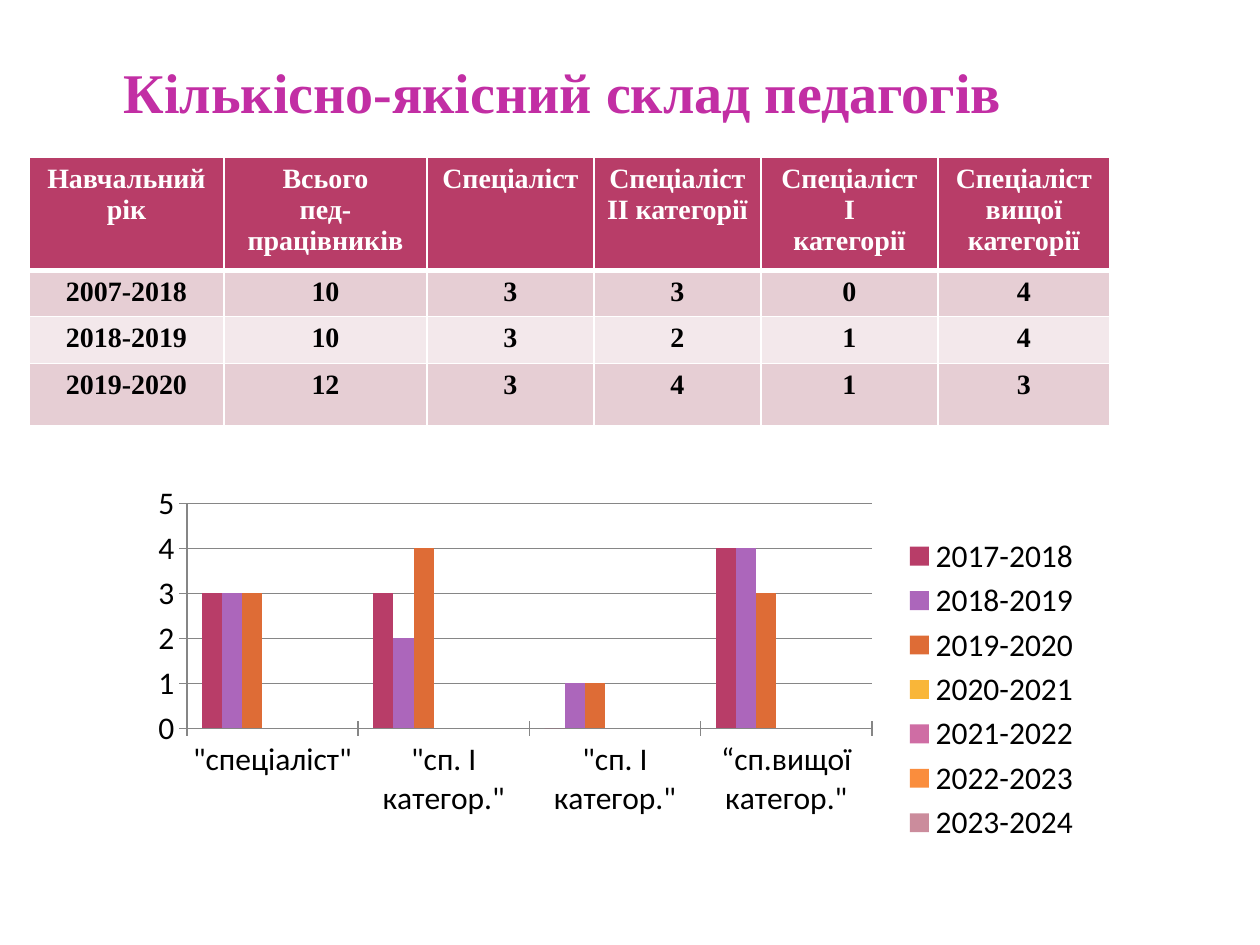
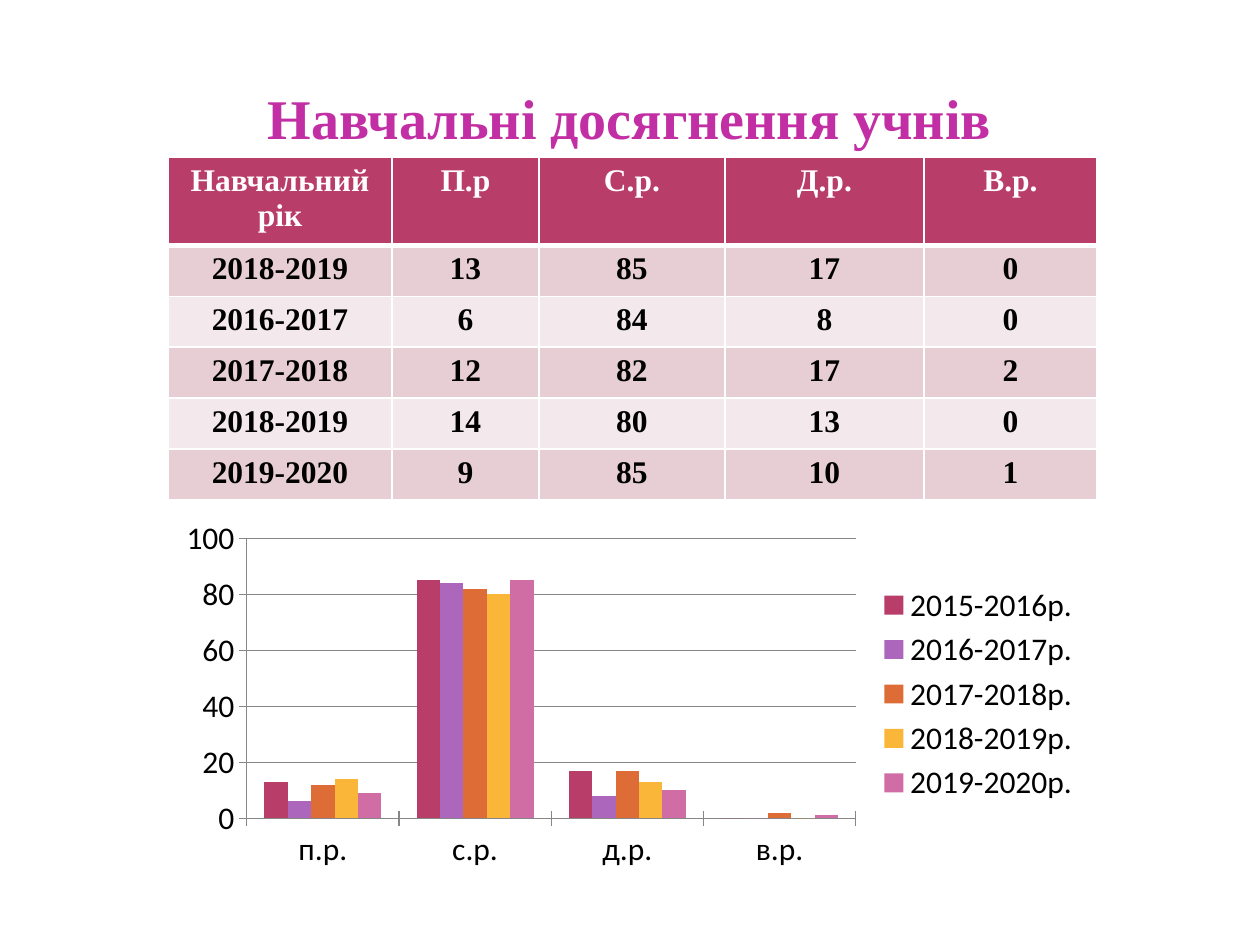
from dataclasses import dataclass
from typing import Optional

import pptx
import pptx.chart.data
import pptx.dml.color
import pptx.enum.chart
import pptx.enum.text
import pptx.oxml
import pptx.oxml.ns
import pptx.util

EMU_PER_PX = 914400 / 126


@dataclass(frozen=True)
class Theme:
    title: str = "C22EA4"
    header_fill: str = "B83D68"
    header_text: str = "FFFFFF"
    body_text: str = "000000"
    bands: tuple[str, ...] = ("E6CED4", "F3E8EB")
    border: str = "FFFFFF"
    chart_line: str = "868686"
    series: tuple[str, ...] = (
        "B83D68", "AC66BB", "DE6C36", "F9B639", "CF6DA4", "FA8D3D", "CB8C9C")
    title_font: str = "Times New Roman"
    chart_font: str = "Calibri"
    title_size: int = 32
    chart_size: int = 18
    border_width: int = 1
    header_rule_width: int = 3


THEME = Theme()


@dataclass(frozen=True)
class Box:
    left: int
    top: int
    width: int
    height: int

    def emu(self) -> tuple[pptx.util.Emu, ...]:
        return tuple(px(n) for n in (self.left, self.top, self.width, self.height))


@dataclass(frozen=True)
class TableSpec:
    left: int
    top: int
    columns: list[int]
    rows: list[int]
    text_size: int
    cells: list[list[str]]


@dataclass(frozen=True)
class ChartSpec:
    box: Box
    categories: list[str]
    series: dict[str, list[Optional[int]]]
    major_unit: int
    maximum: int
    plot: Optional[tuple[float, float, float, float]] = None


@dataclass(frozen=True)
class ReportSlide:
    title: str
    title_box: Box
    table: TableSpec
    chart: ChartSpec


NO_VALUES = [None] * 4

REPORTS = [
    ReportSlide(
        "Кількісно-якісний склад педагогів",
        Box(64, 45, 998, 92),
        TableSpec(
            29, 157, [195, 203, 167, 167, 177, 172], [108, 34, 47, 62], 16,
            [
                ["Навчальний рік", "Всього\nпед-\nпрацівників", "Спеціаліст",
                 "Спеціаліст\nІІ категорії", "Спеціаліст\nI\nкатегорії",
                 "Спеціаліст\nвищої\nкатегорії"],
                ["2007-2018", "10", "3", "3", "0", "4"],
                ["2018-2019", "10", "3", "2", "1", "4"],
                ["2019-2020", "12", "3", "4", "1", "3"],
            ],
        ),
        ChartSpec(
            Box(129, 473, 965, 433),
            ['"спеціаліст"', '"сп. І категор."', '"сп. І категор."',
             '“сп.вищої категор."'],
            {
                "2017-2018": [3, 3, 0, 4],
                "2018-2019": [3, 2, 1, 4],
                "2019-2020": [3, 4, 1, 3],
                "2020-2021": NO_VALUES,
                "2021-2022": NO_VALUES,
                "2022-2023": NO_VALUES,
                "2023-2024": NO_VALUES,
            },
            major_unit=1, maximum=5, plot=(0.06, 0.07, 0.71, 0.52),
        ),
    ),
    ReportSlide(
        "Навчальні досягнення учнів",
        Box(63, 49, 1134, 137),
        TableSpec(
            168, 157, [224, 147, 186, 199, 173], [51] * 6, 18,
            [
                ["Навчальний рік", "П.р", "С.р.", "Д.р.", "В.р."],
                ["2018-2019", "13", "85", "17", "0"],
                ["2016-2017", "6", "84", "8", "0"],
                ["2017-2018", "12", "82", "17", "2"],
                ["2018-2019", "14", "80", "13", "0"],
                ["2019-2020", "9", "85", "10", "1"],
            ],
        ),
        ChartSpec(
            Box(168, 512, 925, 364),
            ["п.р.", "с.р.", "д.р.", "в.р."],
            {
                "2015-2016р.": [13, 85, 17, 0],
                "2016-2017р.": [6, 84, 8, 0],
                "2017-2018р.": [12, 82, 17, 2],
                "2018-2019р.": [14, 80, 13, 0],
                "2019-2020р.": [9, 85, 10, 1],
            },
            major_unit=20, maximum=100,
        ),
    ),
]


def px(length: int) -> pptx.util.Emu:
    return pptx.util.Emu(round(length * EMU_PER_PX))


def rgb(color: str) -> pptx.dml.color.RGBColor:
    return pptx.dml.color.RGBColor.from_string(color)


def style_font(font, name: str, size: int, color: str, bold: bool = False) -> None:
    font.name = name
    font.size = pptx.util.Pt(size)
    font.bold = bold
    font.color.rgb = rgb(color)


def write_centred(text_frame, text: str, size: int, color: str) -> None:
    text_frame.text = text
    for paragraph in text_frame.paragraphs:
        paragraph.alignment = pptx.enum.text.PP_ALIGN.CENTER
        for run in paragraph.runs:
            style_font(run.font, THEME.title_font, size, color, bold=True)


def add_title(slide, text: str, box: Box) -> None:
    text_frame = slide.shapes.add_textbox(*box.emu()).text_frame
    text_frame.word_wrap = True
    text_frame.vertical_anchor = pptx.enum.text.MSO_ANCHOR.MIDDLE
    write_centred(text_frame, text, THEME.title_size, THEME.title)


def set_borders(cell, top: int, bottom: int) -> None:
    """Put the four border lines ahead of the cell's fill, as the schema orders them."""
    side = THEME.border_width
    properties = cell._tc.get_or_add_tcPr()
    widths = {"lnL": side, "lnR": side, "lnT": top, "lnB": bottom}
    for index, (tag, width) in enumerate(widths.items()):
        properties.insert(index, pptx.oxml.parse_xml(
            f'<a:{tag} {pptx.oxml.ns.nsdecls("a")} w="{pptx.util.Pt(width)}">'
            f'<a:solidFill><a:srgbClr val="{THEME.border}"/></a:solidFill></a:{tag}>'))


def add_report_table(slide, spec: TableSpec) -> None:
    box = Box(spec.left, spec.top, sum(spec.columns), sum(spec.rows))
    table = slide.shapes.add_table(
        len(spec.rows), len(spec.columns), *box.emu()).table
    table.horz_banding = False
    for column, width in zip(table.columns, spec.columns):
        column.width = px(width)
    for row_index, (row, height) in enumerate(zip(table.rows, spec.rows)):
        row.height = px(height)
        is_header = row_index == 0
        fill = THEME.header_fill if is_header else THEME.bands[(row_index - 1) % 2]
        color = THEME.header_text if is_header else THEME.body_text
        top = THEME.header_rule_width if row_index == 1 else THEME.border_width
        bottom = THEME.header_rule_width if is_header else THEME.border_width
        for cell, text in zip(row.cells, spec.cells[row_index]):
            write_centred(cell.text_frame, text, spec.text_size, color)
            cell.fill.solid()
            cell.fill.fore_color.rgb = rgb(fill)
            set_borders(cell, top, bottom)


def style_line(line) -> None:
    line.color.rgb = rgb(THEME.chart_line)
    line.width = pptx.util.Pt(0.75)


def place_plot(chart, plot: tuple[float, float, float, float]) -> None:
    """Fix the inner plot area as fractions of the chart: left, top, width, height."""
    plot_area = chart._chartSpace.chart.plotArea
    for layout in plot_area.findall(pptx.oxml.ns.qn("c:layout")):
        plot_area.remove(layout)
    modes = '<c:xMode val="edge"/><c:yMode val="edge"/>'
    sizes = "".join(f'<c:{tag} val="{value}"/>' for tag, value in zip("xywh", plot))
    plot_area.insert(0, pptx.oxml.parse_xml(
        f'<c:layout {pptx.oxml.ns.nsdecls("c")}><c:manualLayout>'
        f'<c:layoutTarget val="inner"/>{modes}{sizes}</c:manualLayout></c:layout>'))


def add_report_chart(slide, spec: ChartSpec) -> None:
    data = pptx.chart.data.CategoryChartData()
    data.categories = spec.categories
    for name, values in spec.series.items():
        data.add_series(name, values)
    chart = slide.shapes.add_chart(
        pptx.enum.chart.XL_CHART_TYPE.COLUMN_CLUSTERED, *spec.box.emu(), data).chart
    style_font(chart.font, THEME.chart_font, THEME.chart_size, THEME.body_text)
    chart.has_title = False
    chart.has_legend = True
    chart.legend.position = pptx.enum.chart.XL_LEGEND_POSITION.RIGHT
    chart.legend.include_in_layout = False

    columns = chart.plots[0]
    columns.vary_by_categories = False
    columns.gap_width = 150
    columns.overlap = 0
    for series, color in zip(columns.series, THEME.series):
        series.format.fill.solid()
        series.format.fill.fore_color.rgb = rgb(color)

    for axis in (chart.category_axis, chart.value_axis):
        axis.major_tick_mark = pptx.enum.chart.XL_TICK_MARK.CROSS
        style_line(axis.format.line)
    chart.value_axis.minimum_scale = 0
    chart.value_axis.maximum_scale = spec.maximum
    chart.value_axis.major_unit = spec.major_unit
    chart.value_axis.has_major_gridlines = True
    style_line(chart.value_axis.major_gridlines.format.line)
    if spec.plot:
        place_plot(chart, spec.plot)


def main() -> None:
    presentation = pptx.Presentation()
    presentation.slide_width = px(1260)
    presentation.slide_height = px(945)
    blank_layout = presentation.slide_layouts[6]
    for report in REPORTS:
        slide = presentation.slides.add_slide(blank_layout)
        add_title(slide, report.title, report.title_box)
        add_report_table(slide, report.table)
        add_report_chart(slide, report.chart)
    presentation.save("out.pptx")


if __name__ == "__main__":
    main()
